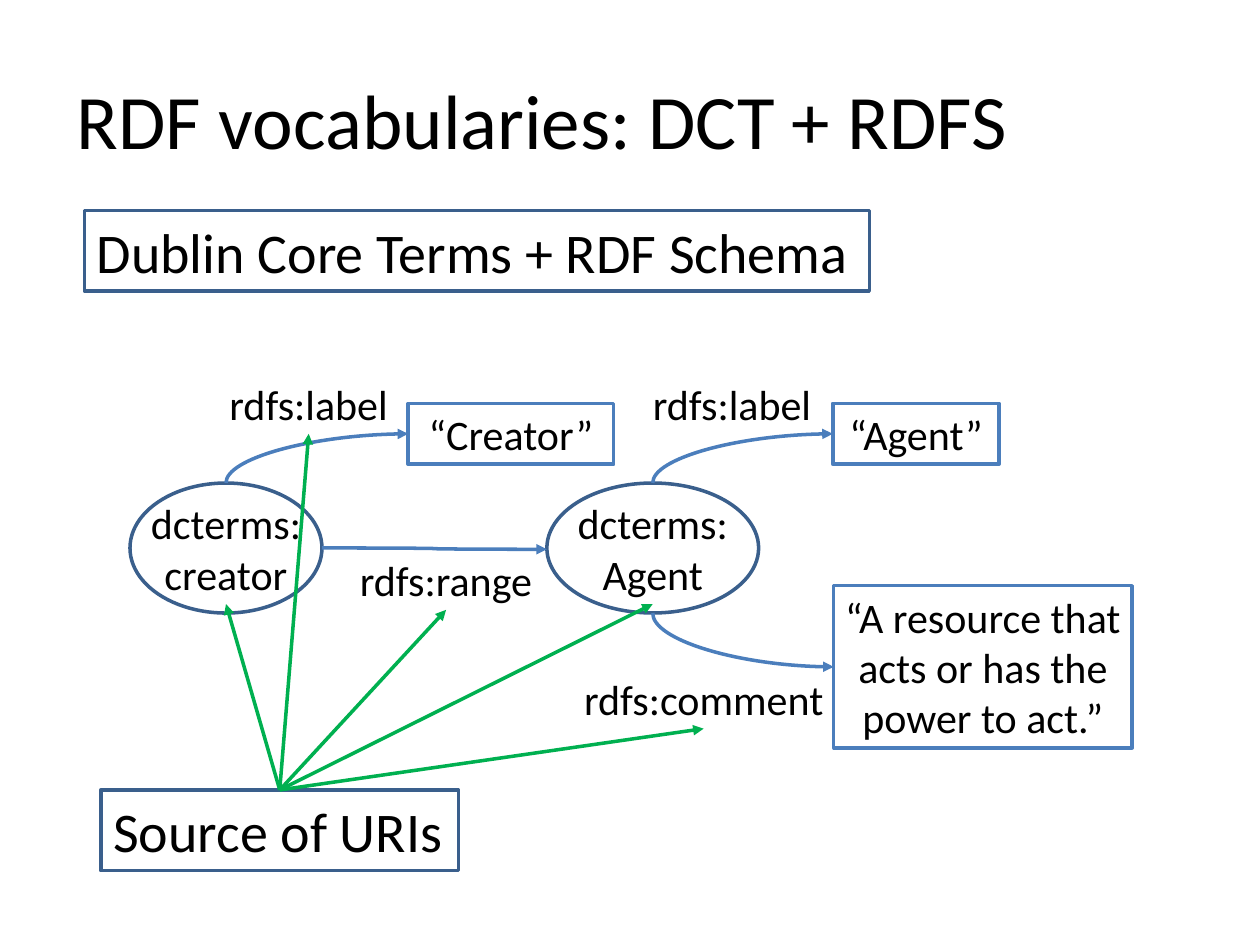
from lxml.etree import SubElement
from pptx import Presentation
from pptx.dml.color import RGBColor
from pptx.enum.shapes import MSO_CONNECTOR as LINK, MSO_SHAPE as SHAPE
from pptx.enum.text import MSO_ANCHOR as ANCHOR, MSO_AUTO_SIZE as AUTO, PP_ALIGN as ALIGN
from pptx.oxml.ns import qn
from pptx.util import Pt

BLACK = RGBColor(0x00, 0x00, 0x00)
NAVY = RGBColor(0x3A, 0x5F, 0x8C)
BLUE = RGBColor(0x4B, 0x7E, 0xBC)
GREEN = RGBColor(0x00, 0xB0, 0x50)
FONT = "Calibri"
LINE_WIDTH = 2

# Every box is left, top, width, height in points
TITLE = ("RDF vocabularies: DCT + RDFS", (36.7, 37.4, 552, 60.5))
HEADINGS = {
    "vocabularies": ("Dublin Core Terms + RDF Schema", (48.2, 120.2, 448.6, 46.1)),
    "source": ("Source of URIs", (57.6, 451.4, 204.5, 46.1)),
}
RESOURCES = {
    "creator": ("dcterms:\ncreator", (74.3, 276, 109.7, 74.3)),
    "agent": ("dcterms:\nAgent", (312.5, 276, 121, 74.3)),
}
LITERALS = {
    "creator name": ("“Creator”", (233.3, 230.5, 117.4, 34.8)),
    "agent name": ("“Agent”", (475.9, 230.5, 95, 34.8)),
    "agent comment": ("“A resource that acts or has the power to act.”", (476.4, 334.7, 170.6, 92.7)),
}
PROPERTIES = {
    "creator label": ("rdfs:label", (118.8, 213.1, 115.2, 34.8)),
    "agent label": ("rdfs:label", (360.7, 213.1, 115.2, 34.8)),
    "range": ("rdfs:range", (197.3, 313.7, 115.2, 34.8)),
    "comment": ("rdfs:comment", (328.3, 381.6, 147.6, 34.8)),
}
STATEMENTS = [("creator", "creator name"), ("agent", "agent name"), ("agent", "agent comment")]
URI_USES = ["creator", "creator label", "range", "agent", "comment"]
RESOURCE_TEXT = (114, 64.1)  # width, height

prs = Presentation()
prs.slide_width, prs.slide_height = Pt(720), Pt(540)
slide = prs.slides.add_slide(prs.slide_layouts[5])
shapes = slide.shapes


def write(shape, text, size, align, margins=(3, 3), wrap=True):
    frame = shape.text_frame
    frame.text = text
    side, end = map(Pt, margins)
    settings = dict(word_wrap=wrap, auto_size=AUTO.NONE, vertical_anchor=ANCHOR.MIDDLE,
                    margin_left=side, margin_right=side, margin_top=end, margin_bottom=end)
    for name, value in settings.items():
        setattr(frame, name, value)
    for paragraph in frame.paragraphs:
        paragraph.alignment = align
        paragraph.font.size, paragraph.font.name = Pt(size), FONT
        paragraph.font.color.rgb = BLACK


def add_outline(kind, box, color):
    shape = shapes.add_shape(kind, *map(Pt, box))
    shape.shadow.inherit = False
    shape.fill.background()
    shape.line.color.rgb, shape.line.width = color, Pt(LINE_WIDTH)
    return shape


def add_label(text, box):
    label = shapes.add_textbox(*map(Pt, box))
    write(label, text, 24, ALIGN.CENTER)
    return label


def add_arrow(kind, color, start=(0, 0), end=(0, 0)):
    arrow = shapes.add_connector(kind, *map(Pt, start + end))
    arrow.line.color.rgb, arrow.line.width = color, Pt(LINE_WIDTH)
    SubElement(arrow.line._get_or_add_ln(), qn("a:tailEnd"), type="triangle")
    SubElement(arrow._element.spPr, qn("a:effectLst"))
    return arrow


def add_quarter_curve(resource_box, literal_box, literal):
    """Curve from the ellipse's top or bottom to the literal's left side."""
    left, top, width, height = resource_box
    x1, x2 = left + width / 2, literal_box[0]
    y2 = literal_box[1] + literal_box[3] / 2
    upward = y2 < top
    y1 = top if upward else top + height
    run, rise = x2 - x1, abs(y2 - y1)

    arrow = add_arrow(LINK.CURVE, BLUE)
    arrow.end_connect(literal, 1)
    # The preset leaves sideways, so its frame is turned a quarter
    frame = dict(left=(x1 + x2 - rise) / 2, top=(y1 + y2 - run) / 2, width=rise, height=run)
    for name, value in frame.items():
        setattr(arrow, name, Pt(value))
    properties = arrow._element.spPr
    properties.find(qn("a:prstGeom")).set("prst", "curvedConnector2")
    turn = properties.find(qn("a:xfrm"))
    turn.set("rot", str((90 if upward else 270) * 60000))
    turn.set("flipH", "1")
    turn.set("flipV", "1" if upward else "0")


title, title_box = TITLE
for name, value in zip(("left", "top", "width", "height"), title_box):
    setattr(shapes.title, name, Pt(value))
write(shapes.title, title, 44, ALIGN.LEFT, (7.2, 3.6), wrap=False)

parts = {}
for key, (text, box) in HEADINGS.items():
    parts[key] = add_outline(SHAPE.RECTANGLE, box, NAVY)
    write(parts[key], text, 32, ALIGN.LEFT, (7.2, 3.6), wrap=False)

for key, (text, box) in RESOURCES.items():
    add_outline(SHAPE.OVAL, box, NAVY)
    left, top, width, height = box
    text_width, text_height = RESOURCE_TEXT
    parts[key] = add_label(text, (left + (width - text_width) / 2, top + (height - text_height) / 2,
                                  text_width, text_height))

for key, (text, box) in LITERALS.items():
    parts[key] = add_outline(SHAPE.RECTANGLE, box, BLUE)
    write(parts[key], text, 24, ALIGN.CENTER)

for key, (text, box) in PROPERTIES.items():
    parts[key] = add_label(text, box)

for resource, literal in STATEMENTS:
    add_quarter_curve(RESOURCES[resource][1], LITERALS[literal][1], parts[literal])

creator_box, agent_box = (RESOURCES[key][1] for key in ("creator", "agent"))
middle = creator_box[1] + creator_box[3] / 2
add_arrow(LINK.CURVE, BLUE, (creator_box[0] + creator_box[2], middle), (agent_box[0], middle + 0.8))

for key in URI_USES:
    arrow = add_arrow(LINK.STRAIGHT, GREEN)
    arrow.begin_connect(parts["source"], 0)
    arrow.end_connect(parts[key], 2)

prs.save("out.pptx")
